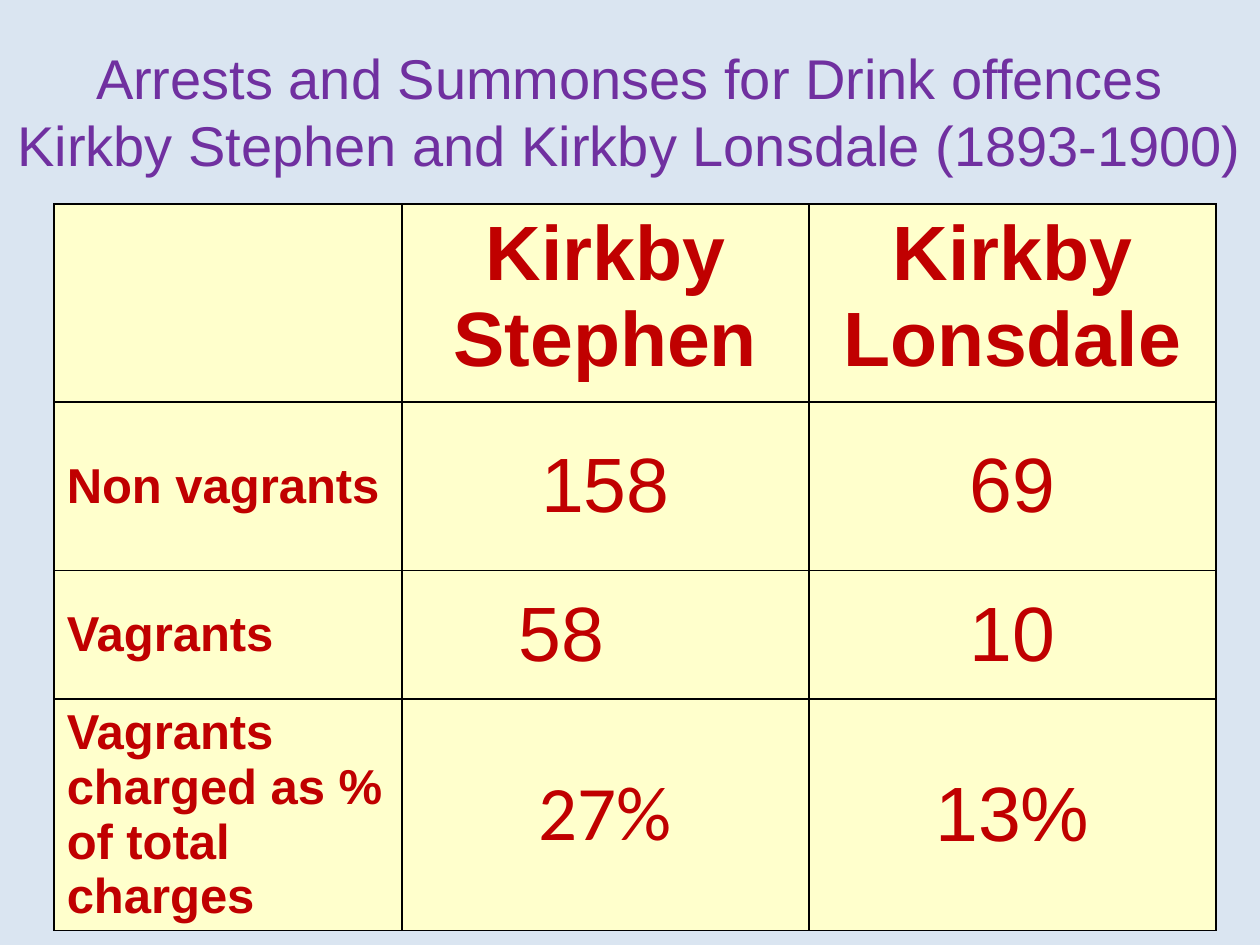
from lxml import etree
from pptx import Presentation
from pptx.dml.color import RGBColor
from pptx.enum.text import MSO_ANCHOR as Anchor, PP_ALIGN as Align
from pptx.oxml.ns import qn
from pptx.util import Inches, Pt

SKY = RGBColor(0xDA, 0xE5, 0xF1)
CREAM = RGBColor(0xFF, 0xFF, 0xCC)
RED = RGBColor(0xC0, 0x00, 0x00)
PURPLE = RGBColor(0x70, 0x30, 0xA0)
BLACK = RGBColor(0x00, 0x00, 0x00)

TITLE = "Arrests and Summonses for Drink offences Kirkby Stephen and Kirkby Lonsdale (1893-1900)"
ROWS = [
    ["", "Kirkby Stephen", "Kirkby Lonsdale"],
    ["Non vagrants", "158", "69"],
    ["Vagrants", "58", "10"],
    ["Vagrants charged as % of total charges", "27%", "13%"],
]
COLUMN_WIDTHS = [2.76, 3.23, 3.23]
ROW_HEIGHTS = [1.57, 1.34, 1.02, 1.83]


def write(frame, text, size, color, align, bold=False, font="Arial"):
    frame.text = text
    para = frame.paragraphs[0]
    para.alignment = align
    for span in para.runs:
        span.font.name = font
        span.font.size = Pt(size)
        span.font.bold = bold
        span.font.color.rgb = color


def add_borders(cell, color, width):
    properties = cell._tc.get_or_add_tcPr()
    for position, side in enumerate(("a:lnL", "a:lnR", "a:lnT", "a:lnB")):
        line = etree.Element(qn(side), w=str(width))
        fill = etree.SubElement(line, qn("a:solidFill"))
        etree.SubElement(fill, qn("a:srgbClr"), val=str(color))
        properties.insert(position, line)


def add_title(page, left, top, width, height):
    box = page.shapes.add_textbox(left, top, width, height)
    frame = box.text_frame
    frame.word_wrap = True
    frame.vertical_anchor = Anchor.MIDDLE
    write(frame, TITLE, 32, PURPLE, Align.CENTER)


def add_offence_table(page, left, top, width, height):
    table = page.shapes.add_table(len(ROWS), len(COLUMN_WIDTHS), left, top, width, height).table
    for column, column_width in zip(table.columns, COLUMN_WIDTHS):
        column.width = Inches(column_width)
    for row, row_height in zip(table.rows, ROW_HEIGHTS):
        row.height = Inches(row_height)
    for i, texts in enumerate(ROWS):
        for j, text in enumerate(texts):
            cell = table.cell(i, j)
            cell.fill.solid()
            cell.fill.fore_color.rgb = CREAM
            add_borders(cell, BLACK, Pt(1))
            cell.vertical_anchor = Anchor.MIDDLE if i else Anchor.TOP
            write(
                cell.text_frame,
                text,
                size=44 if j else 28,
                color=RED,
                align=Align.CENTER if j else Align.LEFT,
                bold=i == 0 or j == 0,
                font="Calibri" if text == "27%" else "Arial",
            )
    table.cell(2, 1).margin_right = Inches(0.8)


def main():
    deck = Presentation()
    deck.slide_width = Inches(10)
    deck.slide_height = Inches(7.5)
    page = deck.slides.add_slide(deck.slide_layouts[6])
    page.background.fill.solid()
    page.background.fill.fore_color.rgb = SKY
    add_offence_table(
        page, Inches(0.43), Inches(1.62), Inches(sum(COLUMN_WIDTHS)), Inches(sum(ROW_HEIGHTS))
    )
    add_title(page, Inches(0), Inches(0.29), deck.slide_width, Inches(1.18))
    deck.save("out.pptx")


if __name__ == "__main__":
    main()
